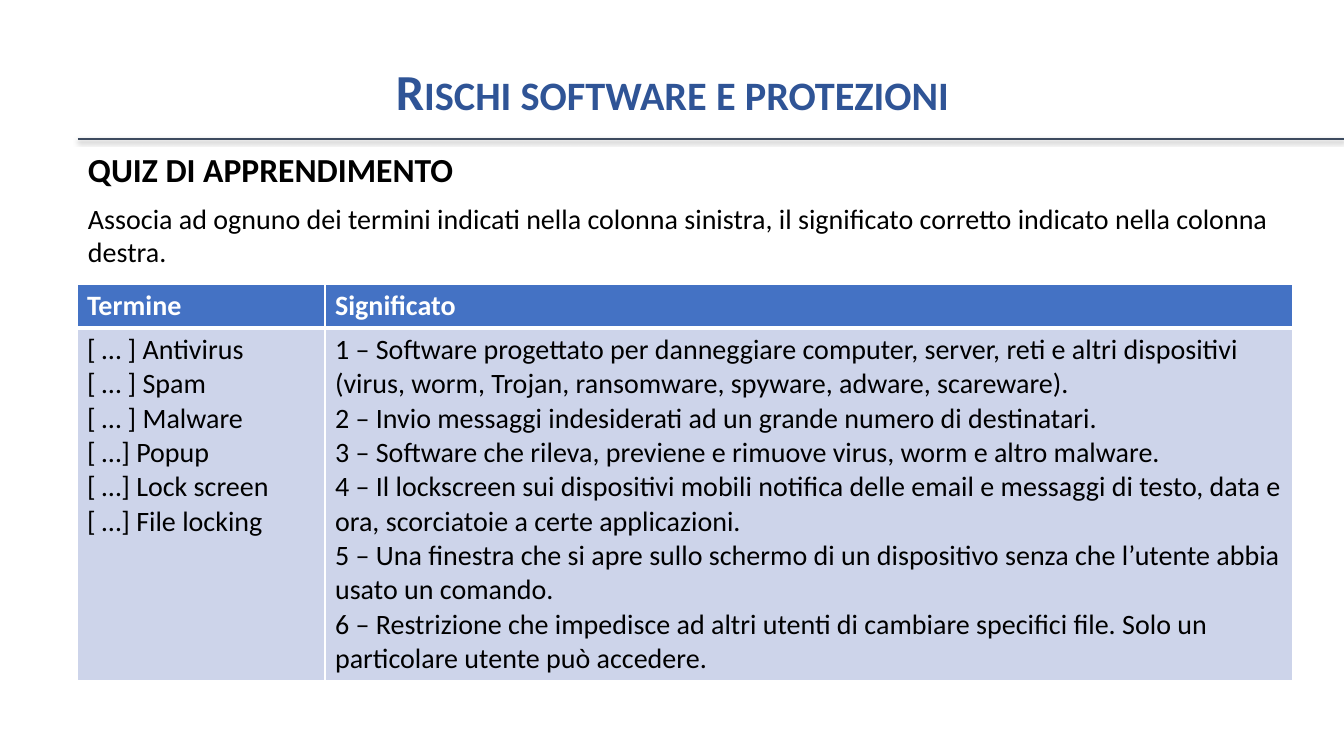
"""Build the quiz slide on software risks and protections."""
from lxml import etree
from pptx import Presentation
from pptx.dml.color import RGBColor
from pptx.enum.shapes import MSO_CONNECTOR
from pptx.enum.text import MSO_ANCHOR, PP_ALIGN
from pptx.oxml import parse_xml
from pptx.oxml.ns import qn
from pptx.util import Emu, Pt

STRAIGHT = MSO_CONNECTOR.STRAIGHT
MIDDLE = MSO_ANCHOR.MIDDLE
CENTER = PP_ALIGN.CENTER
SCALE = 914400 / 100.8
NAMESPACE = "http://schemas.openxmlformats.org/drawingml/2006/main"


def px(*lengths):
    return [Emu(round(length * SCALE)) for length in lengths]


def add_text(frame, lines, size, color, bold):
    for index, line in enumerate(lines):
        para = frame.paragraphs[0] if index == 0 else frame.add_paragraph()
        span = para.add_run()
        span.text = line
        span.font.color.rgb = RGBColor.from_string(color)
        for name, value in {"name": "Calibri", "size": Pt(size), "bold": bold}.items():
            setattr(span.font, name, value)


deck = Presentation()
deck.slide_width, deck.slide_height = px(1344, 756)
page = deck.slides.add_slide(deck.slide_layouts[6])

title = page.shapes.add_textbox(*px(93, 21, 1159, 146)).text_frame
title.word_wrap = True
title.vertical_anchor = MIDDLE
add_text(title, ["Rischi software e protezioni"], 36, "2F5496", True)
heading = title.paragraphs[0]
heading.alignment = CENTER
heading.line_spacing = 0.9
heading.runs[0].font._element.set("cap", "small")

rule = page.shapes.add_connector(STRAIGHT, *px(78, 139, 1344, 139))
rule.line.color.rgb = RGBColor.from_string("3D4B5F")
rule.line.width = Pt(2)
rule._element.spPr.append(parse_xml(
    f'<a:effectLst xmlns:a="{NAMESPACE}">'
    '<a:outerShdw blurRad="39370" dist="20320" dir="5400000" rotWithShape="0">'
    '<a:srgbClr val="000000"><a:alpha val="38000"/></a:srgbClr>'
    '</a:outerShdw></a:effectLst>'))

intro = page.shapes.add_textbox(*px(78, 139, 1266, 442)).text_frame
intro.word_wrap = True
for side in ("left", "top", "right", "bottom"):
    setattr(intro, f"margin_{side}", px(10)[0])
add_text(intro, [
    "QUIZ DI APPRENDIMENTO",
    "Associa ad ognuno dei termini indicati nella colonna sinistra, "
    "il significato corretto indicato nella colonna destra.",
], 20, "000000", False)
quiz_font = intro.paragraphs[0].runs[0].font
quiz_font.size = Pt(24)
quiz_font.bold = True
intro.paragraphs[1].space_before = Pt(8.4)

terms = [
    "[ … ] Antivirus",
    "[ … ] Spam",
    "[ … ] Malware",
    "[ …] Popup",
    "[ …] Lock screen",
    "[ …] File locking",
]
meanings = [
    "1 – Software progettato per danneggiare computer, server, reti e altri dispositivi "
    "(virus, worm, Trojan, ransomware, spyware, adware, scareware).",
    "2 – Invio messaggi indesiderati ad un grande numero di destinatari.",
    "3 – Software che rileva, previene e rimuove virus, worm e altro malware.",
    "4 – Il lockscreen sui dispositivi mobili notifica delle email e messaggi di testo, "
    "data e ora, scorciatoie a certe applicazioni.",
    "5 – Una finestra che si apre sullo schermo di un dispositivo senza che l’utente "
    "abbia usato un comando.",
    "6 – Restrizione che impedisce ad altri utenti di cambiare specifici file. "
    "Solo un particolare utente può accedere.",
]
quiz_rows = [
    {"cells": [["Termine"], ["Significato"]], "height": 44, "fill": "4472C4",
     "color": "FFFFFF", "bold": True, "borders": {"L": 1, "R": 1, "T": 1, "B": 3}},
    {"cells": [terms, meanings], "height": 353, "fill": "CDD4EA",
     "color": "000000", "bold": False, "borders": {"L": 1, "R": 1, "T": 3, "B": 1}},
]
table = page.shapes.add_table(2, 2, *px(77, 284, 1216, 397)).table
for column, width in zip(table.columns, px(248, 968)):
    column.width = width
for row_index, row in enumerate(quiz_rows):
    table.rows[row_index].height = px(row["height"])[0]
    for column_index, lines in enumerate(row["cells"]):
        cell = table.cell(row_index, column_index)
        add_text(cell.text_frame, lines, 20, row["color"], row["bold"])
        properties = cell._tc.get_or_add_tcPr()
        for side, width in row["borders"].items():
            border = etree.SubElement(properties, qn(f"a:ln{side}"), w=str(Pt(width)))
            fill = etree.SubElement(border, qn("a:solidFill"))
            etree.SubElement(fill, qn("a:srgbClr"), val="FFFFFF")
        cell.fill.solid()
        cell.fill.fore_color.rgb = RGBColor.from_string(row["fill"])

deck.save("out.pptx")
